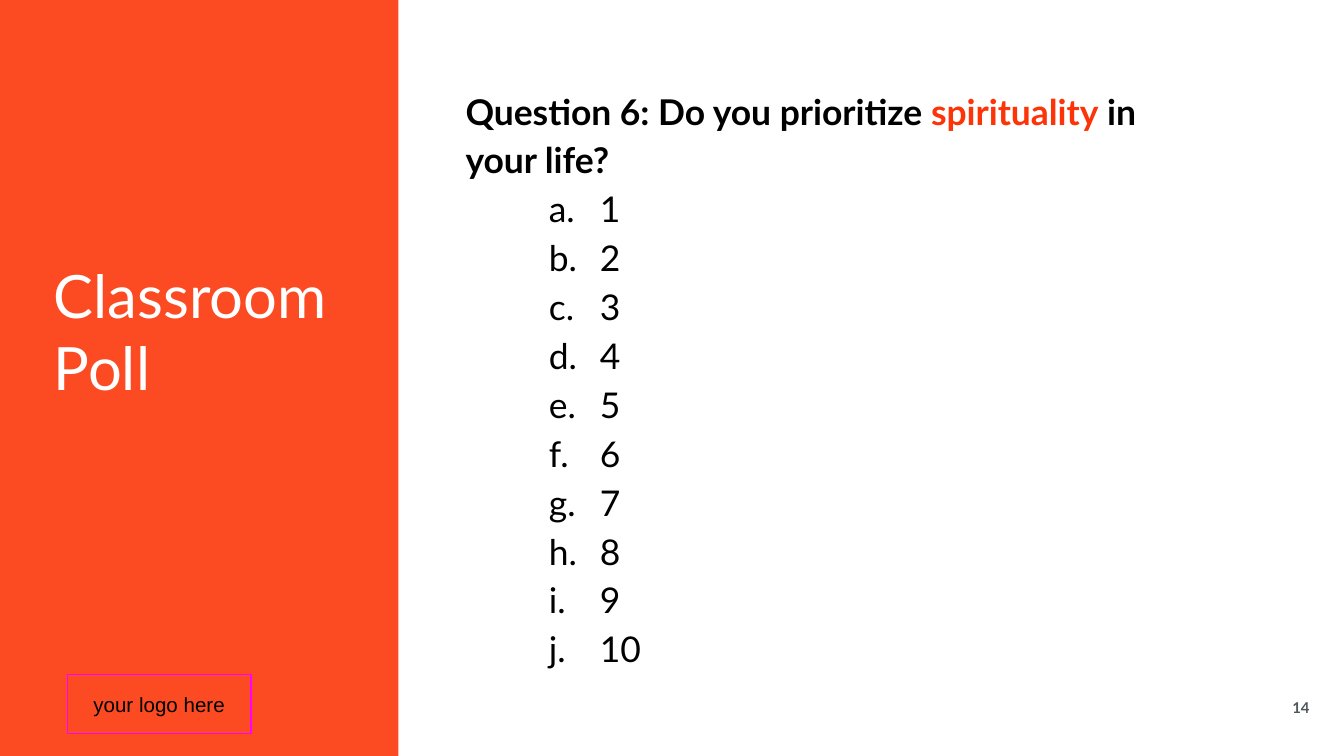
from lxml import etree
from pptx import Presentation
from pptx.dml.color import RGBColor
from pptx.enum.shapes import MSO_SHAPE
from pptx.enum.text import MSO_ANCHOR, PP_ALIGN
from pptx.oxml.ns import qn
from pptx.util import Inches, Pt

RECT = MSO_SHAPE.RECTANGLE
TOP, MIDDLE = MSO_ANCHOR.TOP, MSO_ANCHOR.MIDDLE
LEFT, CENTER = PP_ALIGN.LEFT, PP_ALIGN.CENTER

ORANGE = RGBColor(0xFC, 0x34, 0x07)
WHITE = RGBColor(0xFF, 0xFF, 0xFF)
BLACK = RGBColor(0, 0, 0)
GRAY = RGBColor(0x4F, 0x58, 0x59)
MAGENTA = RGBColor(0xFF, 0, 0xFF)

COLS, ROWS = 100, 56.25


class PollSlide:
    font = "Lato"
    question_size = 19
    line_spacing = 1.15

    def __init__(self, prs):
        self.cell_w = prs.slide_width / COLS
        self.cell_h = prs.slide_height / ROWS
        self.slide = prs.slides.add_slide(prs.slide_layouts[6])

    def place(self, col, row, cols, rows):
        """Turn grid columns and rows into left, top, width and height."""
        return (round(col * self.cell_w), round(row * self.cell_h),
                round(cols * self.cell_w), round(rows * self.cell_h))

    def frame(self, s, margins=(0, 0, 0, 0), anchor=TOP):
        """Set up the text frame; margins are left, top, right, bottom in inches."""
        tf = s.text_frame
        tf.word_wrap = True
        tf.vertical_anchor = anchor
        (tf.margin_left, tf.margin_top,
         tf.margin_right, tf.margin_bottom) = map(Inches, margins)
        return tf

    def run(self, p, text, size, color=BLACK, bold=False, font=None):
        r = p.add_run()
        r.text = text
        r.font.name = font or self.font
        r.font.size = Pt(size)
        r.font.bold = bold
        r.font.color.rgb = color

    def label(self, area, text, size, color, bold=False):
        s = self.slide.shapes.add_textbox(*self.place(*area))
        p = self.frame(s, anchor=MIDDLE).paragraphs[0]
        p.alignment = CENTER
        self.run(p, text, size, color, bold)

    def panel(self, area, text, size, color, margins, align=LEFT,
              fill=None, opacity=100, line=None, font=None):
        s = self.slide.shapes.add_shape(RECT, *self.place(*area))
        s.shadow.inherit = False
        if fill is None:
            s.fill.background()
        else:
            s.fill.solid()
            s.fill.fore_color.rgb = fill
            srgb = s.fill._xPr.find(".//" + qn("a:srgbClr"))
            etree.SubElement(srgb, qn("a:alpha"), val=str(opacity * 1000))
        if line is None:
            s.line.fill.background()
        else:
            s.line.color.rgb = line
            s.line.width = Pt(0.75)
        p = self.frame(s, margins, MIDDLE).paragraphs[0]
        p.alignment = align
        self.run(p, text, size, color, font=font)

    def letter(self, p):
        """Number the paragraph a., b., c. with a hanging indent."""
        pPr = p._p.get_or_add_pPr()
        pPr.set("lvl", "1")
        pPr.set("marL", str(Inches(1)))
        pPr.set("indent", str(Inches(-0.38)))
        clr = etree.SubElement(pPr, qn("a:buClr"))
        etree.SubElement(clr, qn("a:srgbClr"), val=str(BLACK))
        etree.SubElement(pPr, qn("a:buSzPts"), val=str(self.question_size * 100))
        etree.SubElement(pPr, qn("a:buFont"), typeface=self.font)
        etree.SubElement(pPr, qn("a:buAutoNum"), type="alphaLcPeriod")

    def question(self, area, parts, answers):
        s = self.slide.shapes.add_textbox(*self.place(*area))
        tf = self.frame(s)
        p = tf.paragraphs[0]
        p.line_spacing = self.line_spacing
        for text, color in parts:
            self.run(p, text, self.question_size, color, bold=True)
        for answer in answers:
            p = tf.add_paragraph()
            self.letter(p)
            p.line_spacing = self.line_spacing
            self.run(p, str(answer), self.question_size)


def main():
    prs = Presentation()
    prs.slide_width = Inches(10)
    prs.slide_height = prs.slide_width * 9 // 16
    poll = PollSlide(prs)
    poll.question((34.64, 6.2, 55.4, 36.3),
                  [("Question 6: Do you prioritize ", BLACK),
                   ("spirituality", ORANGE),
                   (" in your life?", BLACK)],
                  range(1, 11))
    poll.panel((0, 0, 29.64, ROWS), "Classroom Poll", 32, WHITE,
               (0.4, 0.4, 0.4, 1.11), fill=ORANGE, opacity=89)
    poll.label((95.1, 51.44, 3.4, 2.4), "14", 8, GRAY, bold=True)
    poll.panel((5.02, 50.2, 13.66, 4.4), "your logo here", 11, BLACK,
               (0.1, 0.1, 0.1, 0.1), align=CENTER, line=MAGENTA, font="Arial")
    prs.save("out.pptx")


if __name__ == "__main__":
    main()
